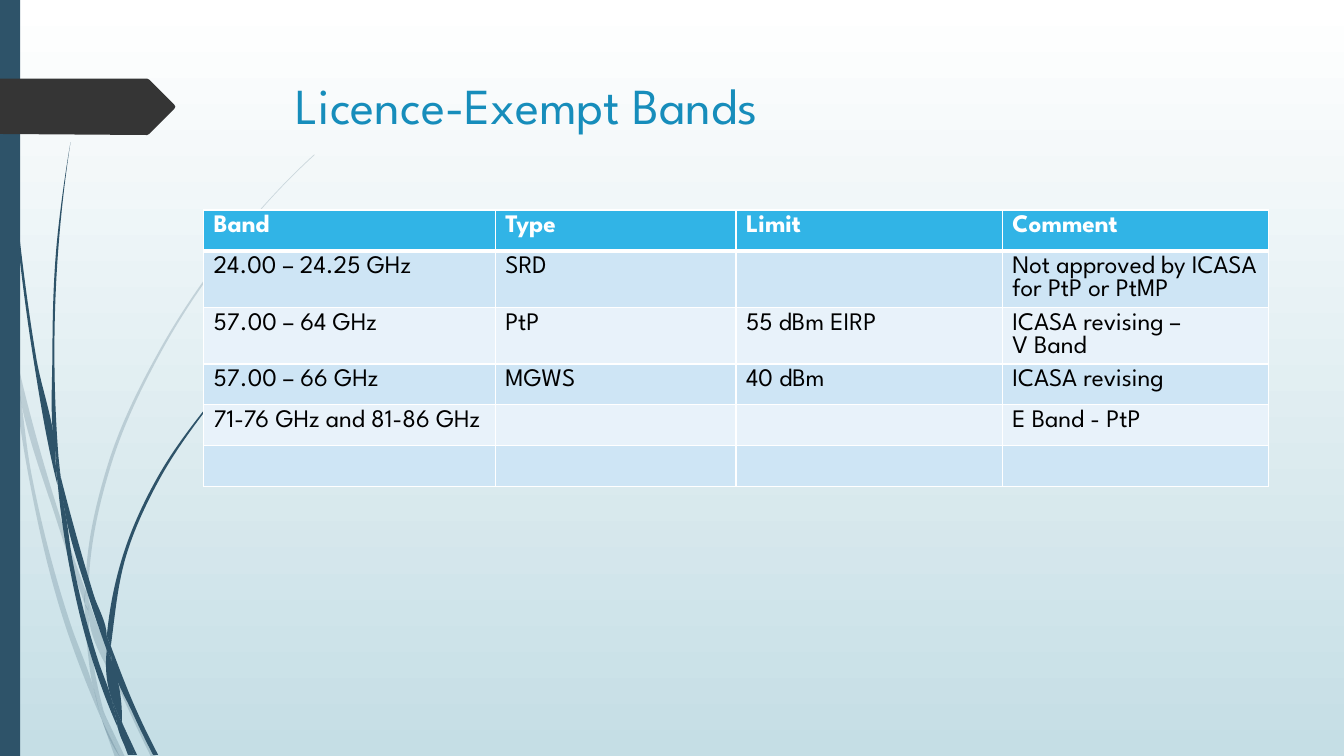
from math import dist

from lxml.etree import SubElement
from pptx import Presentation
from pptx.dml.color import RGBColor
from pptx.enum.shapes import MSO_SHAPE
from pptx.enum.text import MSO_ANCHOR, PP_ALIGN
from pptx.oxml.ns import qn
from pptx.util import Cm, Pt

FONT = "League Spartan"
WHITE = RGBColor(0xFF, 0xFF, 0xFF)
BLACK = RGBColor(0x00, 0x00, 0x00)
MIST = RGBColor(0xC5, 0xDE, 0xE5)
NAVY = RGBColor(0x2E, 0x53, 0x69)
CHARCOAL = RGBColor(0x35, 0x35, 0x35)
TITLE_BLUE = RGBColor(0x17, 0x8D, 0xBB)
HEADER_BLUE = RGBColor(0x31, 0xB4, 0xE6)
BANDS = (RGBColor(0xE8, 0xF2, 0xFA), RGBColor(0xCE, 0xE5, 0xF5))

TITLE = "Licence-Exempt Bands"
ROWS = [
    ("Band", "Type", "Limit", "Comment"),
    ("24.00 – 24.25 GHz", "SRD", "", "Not approved by ICASA for PtP or PtMP"),
    ("57.00 – 64 GHz", "PtP", "55 dBm EIRP", "ICASA revising –\nV Band"),
    ("57.00 – 66 GHz", "MGWS", "40 dBm", "ICASA revising"),
    ("71-76 GHz and 81-86 GHz", "", "", "E Band - PtP"),
    ("", "", "", ""),
]
COLUMN_WIDTHS = (7.35, 6.07, 6.71, 6.71)
ROW_HEIGHT = 1.03
HEADER_BORDERS = (("a:lnL", 1), ("a:lnR", 1), ("a:lnT", 1), ("a:lnB", 3))
BODY_BORDERS = (("a:lnL", 1), ("a:lnR", 1), ("a:lnT", 1), ("a:lnB", 1))

GRID = Cm(0.0254)
FAINT_STRANDS = [
    ([(11, 350), (9, 322), (0, 282)], [(0, 299), (10, 344), (11, 350)]),
    ([(14, 345), (17, 376), (58, 522), (84, 599)], [(85, 586), (62, 520), (14, 345)]),
    ([(88, 596), (88, 610), (123, 694), (150, 751)],
     [(155, 751), (127, 692), (92, 607), (88, 596)]),
    ([(105, 711), (119, 751)], [(124, 751), (105, 711)]),
    ([(11, 350), (28, 470), (65, 621), (92, 693), (101, 714)],
     [(99, 707), (93, 683), (70, 619), (31, 469), (17, 376), (11, 350)]),
    ([(84, 599), (87, 646), (93, 683), (96, 692), (105, 711)],
     [(103, 706), (91, 646), (88, 610), (88, 608), (84, 599)]),
    ([(312, 153), (289, 175), (268, 197), (228, 244), (158, 348), (107, 461), (85, 584), (85, 586)],
     [(88, 596), (88, 584), (110, 462), (160, 349), (229, 245), (268, 198), (290, 175), (312, 154)]),
    ([(101, 714), (114, 751)], [(119, 751), (101, 714)]),
    ([(85, 586), (84, 599), (88, 608), (88, 610)], [(88, 596), (85, 586)]),
    ([(93, 683), (99, 707), (101, 714), (119, 751)], [(105, 711), (96, 692), (93, 683)]),
]
SOLID_STRANDS = [
    ([(3, 0), (4, 48), (7, 110), (17, 233), (33, 355), (56, 477), (57, 481)],
     [(55, 457), (55, 453), (36, 355), (19, 232), (8, 109), (5, 48), (4, 0)]),
    ([(60, 472), (64, 505), (88, 592), (106, 645)],
     [(106, 633), (106, 631), (93, 590), (60, 472)]),
    ([(110, 641), (111, 656), (132, 708), (152, 749)],
     [(157, 749), (136, 706), (113, 649), (110, 641)]),
    ([(57, 477), (68, 557), (93, 659), (111, 708), (117, 722)],
     [(116, 717), (110, 691), (98, 657), (72, 556), (64, 505), (57, 477)]),
    ([(70, 141), (62, 193), (56, 245), (52, 349), (55, 449), (60, 472)],
     [(58, 453), (54, 349), (58, 245), (63, 193), (70, 141)]),
    ([(122, 719), (133, 749)], [(136, 749), (122, 719)]),
    ([(55, 449), (55, 453), (57, 477), (64, 505)], [(60, 472), (55, 449)]),
    ([(260, 344), (245, 358), (231, 373), (204, 405), (156, 474), (122, 551), (106, 631)],
     [(110, 641), (111, 633), (125, 552), (158, 476), (205, 406), (231, 374), (245, 359), (261, 344)]),
    ([(117, 722), (127, 749)], [(131, 749), (117, 722)]),
    ([(106, 645), (110, 691), (116, 706), (122, 719)],
     [(121, 716), (111, 656), (109, 651), (106, 645)]),
    ([(106, 631), (106, 633), (106, 645), (109, 651), (111, 656)], [(110, 641), (106, 631)]),
    ([(110, 691), (116, 717), (117, 722), (130, 749)],
     [(133, 749), (122, 719), (116, 706), (110, 691)]),
]
ARROW = [(0, 78), (146, 78), (148, 79), (173, 104), (174, 106), (173, 108),
         (148, 133), (146, 134), (0, 133)]


def edge_slopes(points):
    lengths = [dist(a, b) for a, b in zip(points, points[1:])]
    chords = [((b[0] - a[0]) / length, (b[1] - a[1]) / length)
              for a, b, length in zip(points, points[1:], lengths)]
    if len(chords) == 1:
        return chords * 2
    inner = [tuple((after * c + before * d) / (before + after) for c, d in zip(*pair))
             for before, after, pair in zip(lengths, lengths[1:], zip(chords, chords[1:]))]
    first = tuple(2 * c - s for c, s in zip(chords[0], inner[0]))
    last = tuple(2 * c - s for c, s in zip(chords[-1], inner[-1]))
    return [first, *inner, last]


def edge_curves(points):
    slopes = edge_slopes(points)
    curves = []
    for start, end, leaving, arriving in zip(points, points[1:], slopes, slopes[1:]):
        third = dist(start, end) / 3
        curves.append((
            tuple(p + s * third for p, s in zip(start, leaving)),
            tuple(p - s * third for p, s in zip(end, arriving)),
            end))
    return curves


def paint(shape, color, opacity=100):
    shape.shadow.inherit = False
    shape.line.fill.background()
    shape.fill.solid()
    shape.fill.fore_color.rgb = color
    if opacity < 100:
        color_element = shape.element.spPr.find(".//" + qn("a:srgbClr"))
        SubElement(color_element, qn("a:alpha")).set("val", str(opacity * 1000))


def add_outline(slide, points, color, opacity=100):
    corners = [(x * GRID, y * GRID) for x, y in points]
    builder = slide.shapes.build_freeform(*corners[0])
    builder.add_line_segments(corners[1:], close=True)
    shape = builder.convert_to_shape()
    paint(shape, color, opacity)
    return shape


def add_strand(slide, outer_edge, inner_edge, opacity):
    shape = add_outline(slide, outer_edge + inner_edge, NAVY, opacity)
    curves = edge_curves(outer_edge) + [None] + edge_curves(inner_edge)
    for line, curve in zip(list(shape.element.iter(qn("a:lnTo"))), curves):
        if curve is None:
            continue
        for point in list(line):
            line.remove(point)
        line.tag = qn("a:cubicBezTo")
        for x, y in curve:
            point = SubElement(line, qn("a:pt"))
            point.set("x", str(round(x * GRID) - shape.left))
            point.set("y", str(round(y * GRID) - shape.top))


def format_text(text_frame, size, color, bold=False):
    for paragraph in text_frame.paragraphs:
        paragraph.alignment = PP_ALIGN.LEFT
        for run in paragraph.runs:
            run.font.name = FONT
            run.font.size = Pt(size)
            run.font.bold = bold
            run.font.color.rgb = color


def set_borders(cell, borders):
    properties = cell._tc.get_or_add_tcPr()
    for position, (tag, width) in enumerate(borders):
        line = SubElement(properties, qn(tag))
        line.set("w", str(Pt(width)))
        fill = SubElement(line, qn("a:solidFill"))
        SubElement(fill, qn("a:srgbClr")).set("val", str(WHITE))
        properties.insert(position, line)


def add_background(slide):
    fill = slide.background.fill
    fill.gradient()
    fill.gradient_angle = 270
    for stop, color in zip(fill.gradient_stops, (WHITE, MIST)):
        stop.color.rgb = color


def add_decoration(slide, height):
    for strands, opacity in ((FAINT_STRANDS, 20), (SOLID_STRANDS, 100)):
        for outer_edge, inner_edge in strands:
            add_strand(slide, outer_edge, inner_edge, opacity)
    paint(slide.shapes.add_shape(MSO_SHAPE.RECTANGLE, 0, 0, Cm(0.51), height), NAVY)
    add_outline(slide, ARROW, CHARCOAL)


def add_title(slide):
    title = slide.shapes.title
    slide.shapes.element.append(title.element)
    title.left, title.top, title.width, title.height = Cm(7.2), Cm(1.73), Cm(24.77), Cm(3.56)
    title.text_frame.text = TITLE
    title.text_frame.vertical_anchor = MSO_ANCHOR.TOP
    format_text(title.text_frame, 36, TITLE_BLUE)


def add_band_table(slide):
    table = slide.shapes.add_table(
        len(ROWS), len(COLUMN_WIDTHS), Cm(5.13), Cm(5.29),
        Cm(sum(COLUMN_WIDTHS)), Cm(ROW_HEIGHT * len(ROWS))).table
    for column, width in zip(table.columns, COLUMN_WIDTHS):
        column.width = Cm(width)
    for row_index, texts in enumerate(ROWS):
        header = row_index == 0
        for column_index, text in enumerate(texts):
            cell = table.cell(row_index, column_index)
            cell.fill.solid()
            cell.fill.fore_color.rgb = HEADER_BLUE if header else BANDS[row_index % 2]
            borders = HEADER_BORDERS if header else BODY_BORDERS
            set_borders(cell, borders if row_index != 1 else BODY_BORDERS[:2] + (("a:lnT", 3), ("a:lnB", 1)))
            cell.text_frame.text = text
            format_text(cell.text_frame, 18, WHITE if header else BLACK, header)


def main():
    presentation = Presentation()
    presentation.slide_width, presentation.slide_height = Cm(33.87), Cm(19.05)
    slide = presentation.slides.add_slide(presentation.slide_layouts[5])
    add_background(slide)
    add_decoration(slide, presentation.slide_height)
    add_title(slide)
    add_band_table(slide)
    presentation.save("out.pptx")


if __name__ == "__main__":
    main()
